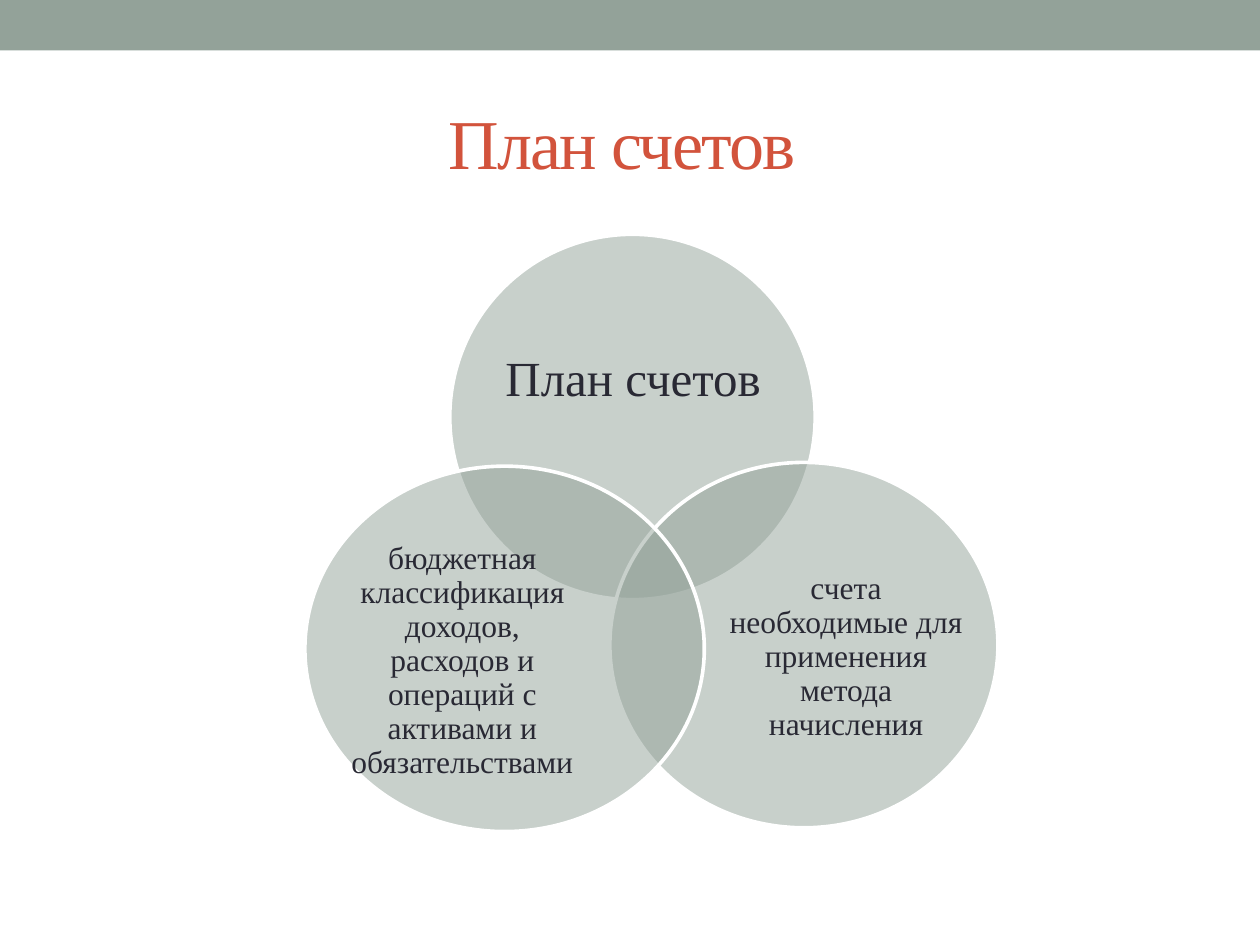
from pptx import Presentation
from pptx.dml.color import RGBColor
from pptx.enum.shapes import MSO_SHAPE
from pptx.enum.text import MSO_ANCHOR, PP_ALIGN
from pptx.util import Inches, Pt
from lxml import etree

RECT, OVAL = MSO_SHAPE.RECTANGLE, MSO_SHAPE.OVAL
MIDDLE, CENTER = MSO_ANCHOR.MIDDLE, PP_ALIGN.CENTER
NS = "http://schemas.openxmlformats.org/drawingml/2006/main"
FONT = "Times New Roman"
SAGE, RUST, INK, WHITE = "93A299", "D2533C", "292934", "FFFFFF"
WIDE, HIGH = 10, 7.5

# Circle box, label box, label text and size; drawn from back to front
SETS = [
    ((3.57, 1.86, 2.9, 2.9), (3.96, 2.37, 2.13, 1.3), "План счетов", 28),
    ((4.84, 3.67, 3.08, 2.9), (5.78, 4.42, 1.87, 1.59),
     "счета необходимые для применения метода начисления", 18),
    ((2.42, 3.7, 3.17, 2.9), (2.72, 4.45, 1.9, 1.59),
     "бюджетная классификация доходов, расходов и операций "
     "с активами и обязательствами", 18),
]


def paint(color, code):
    color.rgb = RGBColor.from_string(code)


def place(box):
    return [Inches(n) for n in box]


def apply(item, **values):
    for name, value in values.items():
        setattr(item, name, value)


def write(frame, text, size, code):
    """Fill a frame with one centred paragraph and return it."""
    apply(frame, text=text, word_wrap=True, vertical_anchor=MIDDLE)
    para = frame.paragraphs[0]
    para.alignment = CENTER
    font = para.runs[0].font
    apply(font, name=FONT, size=Pt(size))
    paint(font.color, code)
    return para


def add_shape(slide, kind, box):
    shape = slide.shapes.add_shape(kind, *place(box))
    shape.shadow.inherit = False
    shape.fill.solid()
    paint(shape.fill.fore_color, SAGE)
    shape.line.fill.background()
    return shape


def add_circle(slide, box):
    shape = add_shape(slide, OVAL, box)
    # Half-clear fill
    tint = shape.fill._xPr.find(f"{{{NS}}}solidFill")[0]
    etree.SubElement(tint, f"{{{NS}}}alpha", val="50000")
    paint(shape.line.color, WHITE)
    shape.line.width = Pt(2.08)


def add_label(slide, box, text, size):
    frame = slide.shapes.add_textbox(*place(box)).text_frame
    apply(frame, margin_left=0, margin_right=0, margin_top=0, margin_bottom=0)
    para = write(frame, text, size, INK)
    apply(para, line_spacing=0.9, space_after=Pt(0.35 * size))


def add_title(slide, text):
    title = slide.shapes.title
    left, top, width, height = place((0.5, 0.58, 9, 1.08))
    apply(title, left=left, top=top, width=width, height=height)
    para = write(title.text_frame, text, 40, RUST)
    para.runs[0].font._element.set("spc", "-100")


def main():
    deck = Presentation()
    apply(deck, slide_width=Inches(WIDE), slide_height=Inches(HIGH))
    slide = deck.slides.add_slide(deck.slide_layouts[5])

    # Band and title
    add_shape(slide, RECT, (0, 0, WIDE, 0.4))
    add_title(slide, "План счетов ")

    # Venn diagram
    for circle, label, text, size in SETS:
        add_circle(slide, circle)
        add_label(slide, label, text, size)

    deck.save("out.pptx")


if __name__ == "__main__":
    main()
